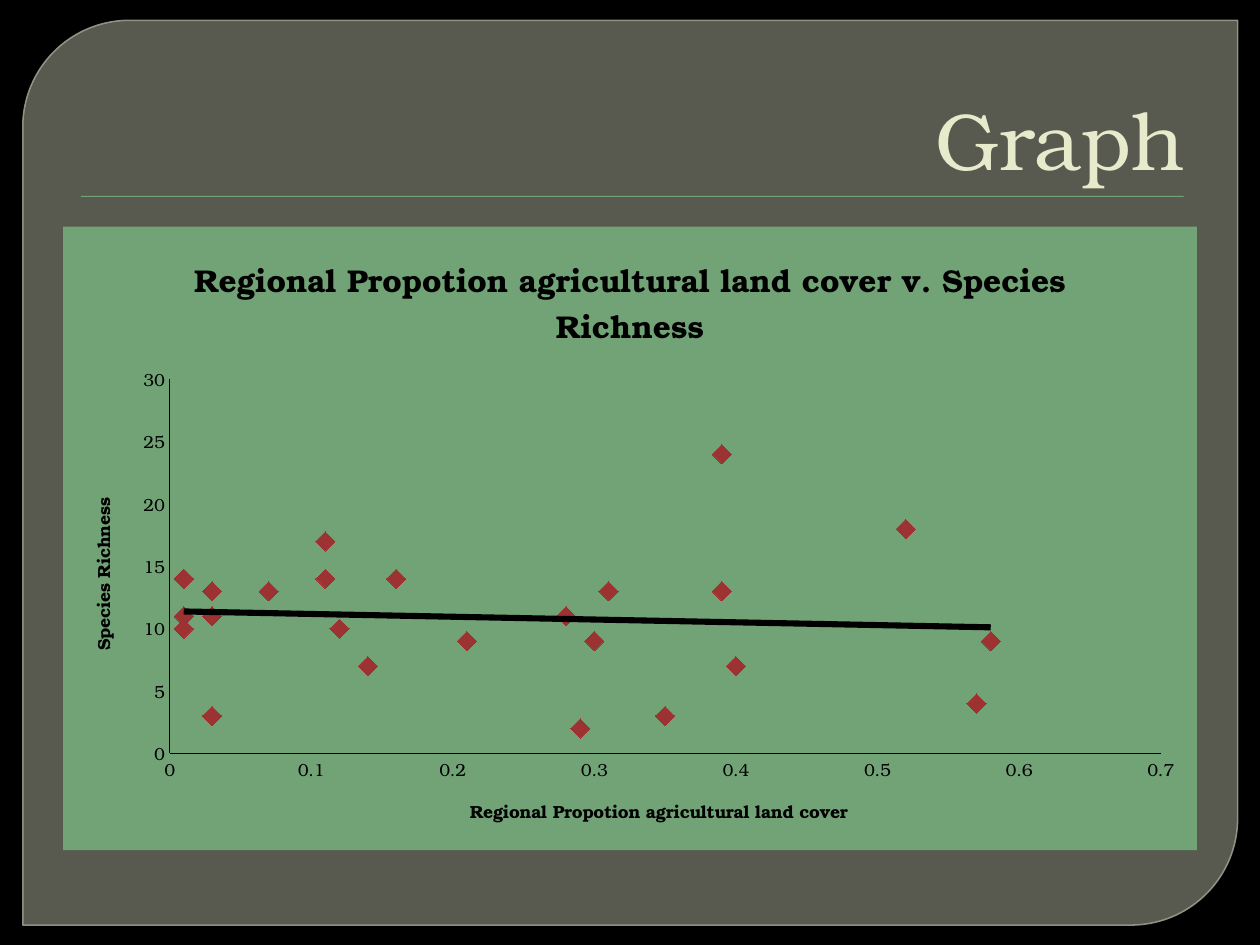
from dataclasses import dataclass

from lxml import etree
from pptx import Presentation
from pptx.chart.data import XyChartData
from pptx.dml.color import RGBColor
from pptx.enum.chart import XL_CHART_TYPE, XL_MARKER_STYLE, XL_TICK_MARK
from pptx.enum.shapes import MSO_SHAPE
from pptx.enum.text import MSO_ANCHOR, PP_ALIGN
from pptx.oxml import parse_xml
from pptx.oxml.ns import nsdecls, qn
from pptx.util import Cm, Pt

SCATTER = XL_CHART_TYPE.XY_SCATTER
DIAMOND = XL_MARKER_STYLE.DIAMOND
NO_TICK = XL_TICK_MARK.NONE
PANEL, RECT = MSO_SHAPE.ROUND_2_DIAG_RECTANGLE, MSO_SHAPE.RECTANGLE
BOTTOM, RIGHT = MSO_ANCHOR.BOTTOM, PP_ALIGN.RIGHT


@dataclass(frozen=True)
class Theme:
    font: str = "TeX Gyre Bonum"
    black: RGBColor = RGBColor.from_string("000000")
    panel: RGBColor = RGBColor.from_string("888B7B")
    edge: RGBColor = RGBColor.from_string("9DA090")
    green: RGBColor = RGBColor.from_string("72A376")
    cream: RGBColor = RGBColor.from_string("E7EACB")
    red: RGBColor = RGBColor.from_string("9D3232")
    title: Pt = Pt(46)
    chart_title: Pt = Pt(18)
    label: Pt = Pt(10)


T = Theme()


def style_font(font, size, color, bold=False):
    for name, value in {"name": T.font, "size": size, "bold": bold}.items():
        setattr(font, name, value)
    font.color.rgb = color


def set_alpha(fill_parent, percent):
    color = next(fill_parent.iter(qn("a:srgbClr")))
    etree.SubElement(color, qn("a:alpha")).set("val", str(percent * 1000))


prs = Presentation()
prs.slide_width, prs.slide_height = Cm(25.4), Cm(19.05)
s = prs.slides.add_slide(prs.slide_layouts[6])
s.background.fill.solid()
s.background.fill.fore_color.rgb = T.black

# Translucent panel with two rounded corners
sp = s.shapes.add_shape(PANEL, Cm(0.46), Cm(0.41), Cm(24.49), Cm(18.24))
sp.adjustments[0], sp.adjustments[1] = 0.118, 0
sp.shadow.inherit = False
sp.fill.solid()
sp.fill.fore_color.rgb = T.panel
sp.line.color.rgb = T.edge
sp.line.width = Pt(0.87)
props = sp.element.spPr
set_alpha(props.find(qn("a:solidFill")), 65)
set_alpha(props.find(qn("a:ln")), 88)

# Thin rule under the title
sp = s.shapes.add_shape(RECT, Cm(1.63), Cm(3.95), Cm(22.23), Cm(0.02))
sp.shadow.inherit = False
sp.fill.solid()
sp.fill.fore_color.rgb = T.green
sp.line.fill.background()

# Title
tf = s.shapes.add_textbox(Cm(1.27), Cm(0.71), Cm(22.86), Cm(3.18)).text_frame
tf.word_wrap = True
tf.vertical_anchor = BOTTOM
p = tf.paragraphs[0]
p.alignment = RIGHT
r = p.add_run()
r.text = "Graph"
style_font(r.font, T.title, T.cream)

# Scatter data: land cover, richness
points = [
    (0.03, 3), (0.39, 13), (0.03, 11), (0.28, 11), (0.01, 14),
    (0.01, 11), (0.07, 13), (0.03, 13), (0.01, 14), (0.14, 7),
    (0.3, 9), (0.52, 18), (0.39, 24), (0.4, 7), (0.31, 13),
    (0.01, 10), (0.11, 17), (0.29, 2), (0.35, 3), (0.16, 14),
    (0.58, 9), (0.11, 14), (0.21, 9), (0.12, 10), (0.57, 4),
]
data = XyChartData(number_format="General")
series_data = data.add_series("Series 1")
for cover, richness in points:
    series_data.add_data_point(cover, richness)

chart = s.shapes.add_chart(
    SCATTER, Cm(1.27), Cm(4.57), Cm(22.86), Cm(12.57), data
).chart
chart.has_legend = False
style_font(chart.font, T.label, T.black)

# Chart title and axes
axes = [
    (chart.category_axis, "Regional Propotion agricultural land cover", 0.7, 0.1),
    (chart.value_axis, "Species Richness", 30, 5),
]
titles = [(chart, "Regional Propotion agricultural land cover v. Species Richness",
           T.chart_title)]
for axis, text, top, step in axes:
    formats = {
        "minimum_scale": 0, "maximum_scale": top, "major_unit": step,
        "major_tick_mark": NO_TICK, "minor_tick_mark": NO_TICK,
        "has_major_gridlines": axis is chart.value_axis,
    }
    for name, value in formats.items():
        setattr(axis, name, value)
    lines = [axis.format.line]
    if axis.has_major_gridlines:
        lines.append(axis.major_gridlines.format.line)
    for line in lines:
        line.color.rgb = T.black
        line.width = Pt(0.75)
    style_font(axis.tick_labels.font, T.label, T.black)
    titles.append((axis, text, T.label))

for owner, text, size in titles:
    title = owner.chart_title if owner is chart else owner.axis_title
    r = title.text_frame.paragraphs[0].add_run()
    r.text = text
    style_font(r.font, size, T.black, bold=True)

# Markers
plot = chart.plots[0]
plot.vary_by_categories = False
series = plot.series[0]
series.format.line.fill.background()
series.marker.style = DIAMOND
series.marker.size = 11
series.marker.format.fill.solid()
series.marker.format.fill.fore_color.rgb = T.red
series.marker.format.line.fill.background()

# Linear trend line
trend = parse_xml(
    f'<c:trendline {nsdecls("c", "a")}><c:spPr><a:ln w="{Pt(3.5)}"><a:solidFill>'
    f'<a:srgbClr val="{T.black}"/></a:solidFill></a:ln></c:spPr>'
    '<c:trendlineType val="linear"/><c:dispRSqr val="0"/><c:dispEq val="0"/>'
    "</c:trendline>"
)
series._element.find(qn("c:xVal")).addprevious(trend)

# Green chart background
chart_root = chart._chartSpace
chart_root.find(qn("c:chart")).addnext(parse_xml(
    f'<c:spPr {nsdecls("c", "a")}><a:solidFill><a:srgbClr val="{T.green}"/>'
    "</a:solidFill><a:ln><a:noFill/></a:ln></c:spPr>"
))

# Fixed plot area, as fractions of the chart
area = chart_root.find(qn("c:chart")).find(qn("c:plotArea"))
for old in area.findall(qn("c:layout")):
    area.remove(old)
layout = etree.Element(qn("c:layout"))
manual = etree.SubElement(layout, qn("c:manualLayout"))
for tag, value in {
    "layoutTarget": "inner", "xMode": "edge", "yMode": "edge",
    "x": 0.094, "y": 0.245, "w": 0.874, "h": 0.6,
}.items():
    etree.SubElement(manual, qn(f"c:{tag}")).set("val", str(value))
area.insert(0, layout)

prs.save("out.pptx")
